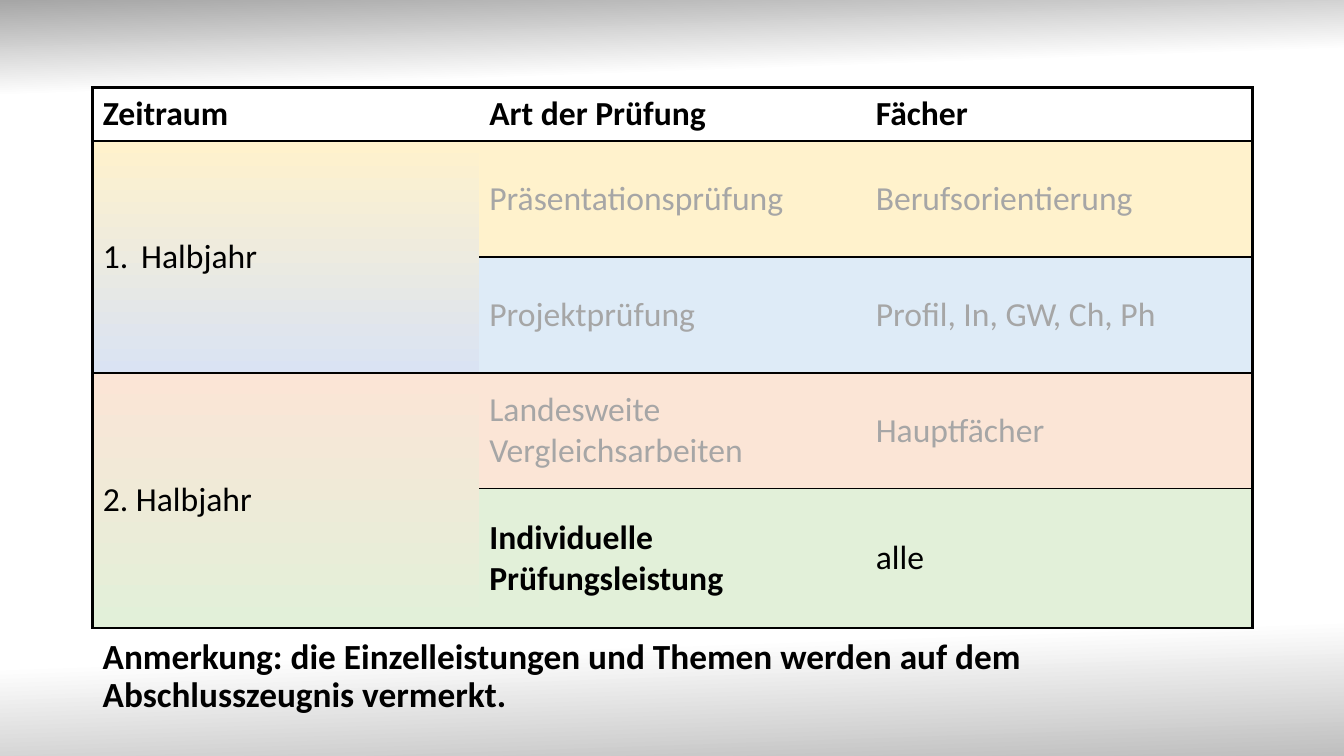
import pptx
import pptx.util
import pptx.dml.color
import pptx.enum.text
import pptx.oxml.ns
import lxml.etree

Inch, Pt, RGB = pptx.util.Inches, pptx.util.Pt, pptx.dml.color.RGBColor
qn, sub = pptx.oxml.ns.qn, lxml.etree.SubElement

BLACK = RGB(0x00, 0x00, 0x00)
GREY = RGB(0xA6, 0xA6, 0xA6)
SILVER = RGB(0xBF, 0xBF, 0xBF)
WHITE = RGB(0xFF, 0xFF, 0xFF)
YELLOW = RGB(0xFF, 0xF2, 0xCC)
BLUE = RGB(0xDE, 0xEB, 0xF7)
LILAC = RGB(0xDA, 0xE3, 0xF3)
PEACH = RGB(0xFB, 0xE5, 0xD6)
GREEN = RGB(0xE2, 0xF0, 0xD9)
THICK, THIN = 2.25, 1
PLAIN = "{2D5ABB26-0587-4C30-8999-92F81FD0307C}"


def write(frame, text, size=24, color=BLACK, bold=False, space=None):
    frame.word_wrap = True
    para = frame.paragraphs[0]
    para.line_spacing = space
    run = para.add_run()
    run.text = text
    run.font.name, run.font.size, run.font.bold = "Calibri", Pt(size), bold
    run.font.color.rgb = color
    return para


def blend(fill, node, stops, angle=90):
    fill.gradient()
    fill.gradient_angle = 360 - angle
    group = node.find(".//" + qn("a:gsLst"))
    for old in list(group):
        group.remove(old)
    for share, color in stops:
        stop = sub(group, qn("a:gs"), pos=str(share * 1000))
        sub(stop, qn("a:srgbClr"), val=str(color))


deck = pptx.Presentation()
deck.slide_width, deck.slide_height = Inch(13.33), Inch(7.5)
slide = deck.slides.add_slide(deck.slide_layouts[6])

# Background
blend(slide.background.fill, slide.element,
      [(0, GREY), (12, WHITE), (83, WHITE), (100, SILVER)], 88)

# Table grid
left, top, width = Inch(0.92), Inch(0.87), Inch(11.5)
highs = [0.53, 1.15, 1.15, 1.15, 1.38]
table = slide.shapes.add_table(5, 3, left, top, width, Inch(sum(highs))).table
table.first_row = table.horz_banding = False
table._tbl.tblPr.find(qn("a:tableStyleId")).text = PLAIN
for row, high in zip(table.rows, highs):
    row.height = Inch(high)
for first in (1, 3):
    table.cell(first, 0).merge(table.cell(first + 1, 0))

# Table content: fill, text colour, texts
rows = [
    (WHITE, BLACK, ["Zeitraum", "Art der Prüfung", "Fächer"]),
    (YELLOW, GREY, ["Halbjahr", "Präsentationsprüfung", "Berufsorientierung"]),
    (BLUE, GREY, ["", "Projektprüfung", "Profil, In, GW, Ch, Ph"]),
    (PEACH, GREY, ["2. Halbjahr", "Landesweite Vergleichsarbeiten", "Hauptfächer"]),
    (GREEN, BLACK, ["", "Individuelle Prüfungsleistung", "alle"]),
]
halves = {1: (YELLOW, LILAC), 3: (PEACH, GREEN)}
rules = [THICK, THICK, THIN, THICK, THIN, THICK]

for r, (tint, ink, texts) in enumerate(rows):
    for c, text in enumerate(texts):
        cell = table.cell(r, c)
        cell.vertical_anchor = pptx.enum.text.MSO_ANCHOR.MIDDLE
        if text:
            write(cell.text_frame, text, color=ink if c else BLACK,
                  bold=r == 0 or (r, c) == (4, 1))
        if c == 0 and r in halves:
            start, end = halves[r]
            blend(cell.fill, cell._tc, [(0, start), (100, end)])
        else:
            cell.fill.solid()
            cell.fill.fore_color.rgb = tint

        # Borders come before the fill
        edges = {
            "lnL": THICK if c == 0 else 0,
            "lnR": THICK if c == 2 else 0,
            "lnT": 0 if cell.is_spanned else rules[r],
            "lnB": rules[r + 1] if c else THICK,
        }
        props = cell._tc.tcPr
        for spot, (name, size) in enumerate(edges.items()):
            line = lxml.etree.Element(qn("a:" + name), w=str(Pt(size)))
            if size:
                sub(sub(line, qn("a:solidFill")), qn("a:srgbClr"), val=str(BLACK))
            else:
                sub(line, qn("a:noFill"))
            props.insert(spot, line)

# Numbered first half-year
item = table.cell(1, 0).text_frame.paragraphs[0]._p.get_or_add_pPr()
item.set("marL", str(Inch(0.38)))
item.set("indent", str(-Inch(0.38)))
sub(item, qn("a:buFont"), typeface="+mj-lt")
sub(item, qn("a:buAutoNum"), type="arabicPeriod")

# Remark below the table
note = slide.shapes.add_textbox(left, Inch(6.31), width, Inch(0.82)).text_frame
note.vertical_anchor = pptx.enum.text.MSO_ANCHOR.MIDDLE
write(note, "Anmerkung: die Einzelleistungen und Themen werden auf dem "
      "Abschlusszeugnis vermerkt.", size=25.2, bold=True, space=0.9)

deck.save("out.pptx")
